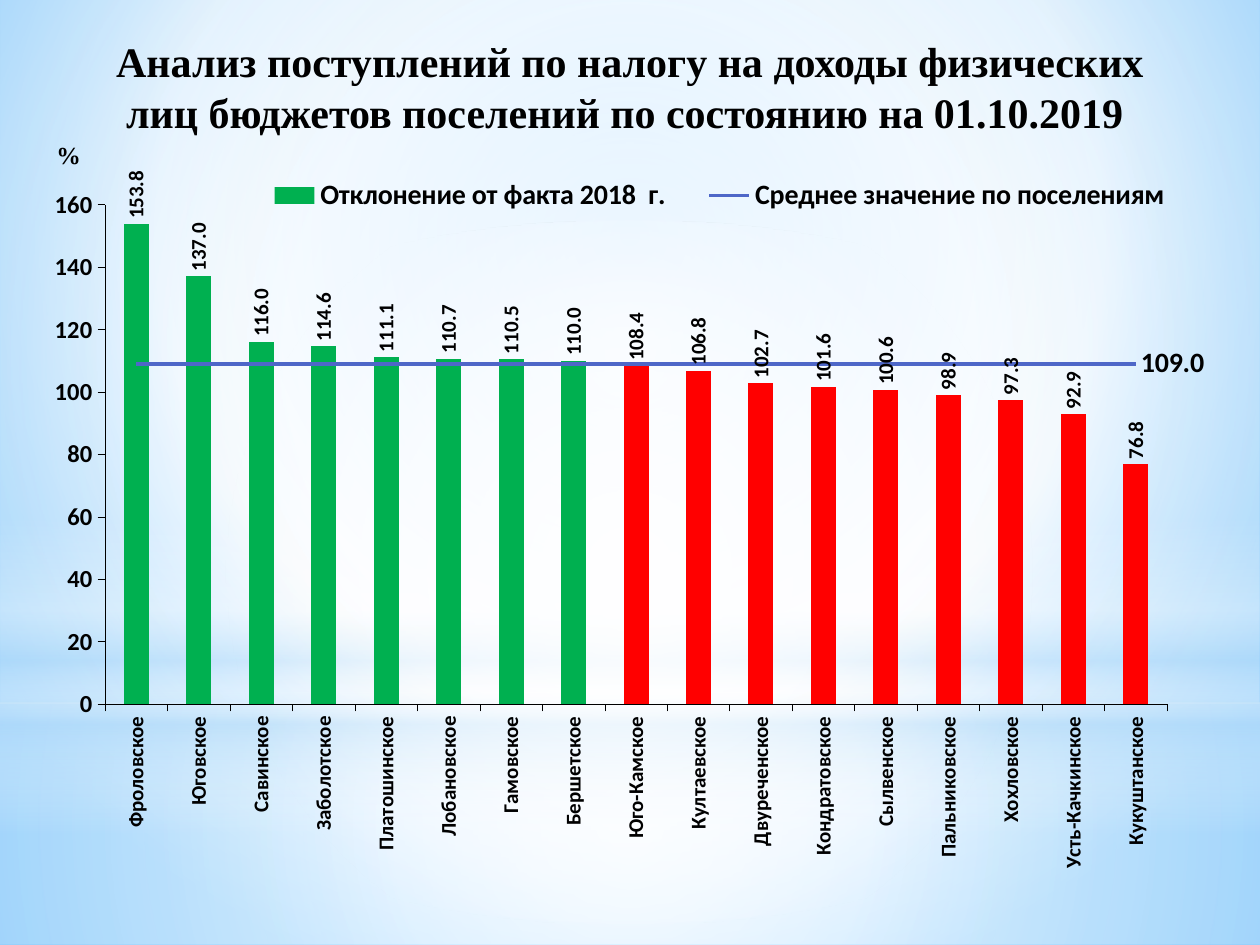
import copy
import lxml.etree
import pptx
import pptx.chart.data
import pptx.dml.color
import pptx.enum.chart
import pptx.enum.shapes
import pptx.enum.text
import pptx.oxml
import pptx.oxml.ns
import pptx.util

Pt = pptx.util.Pt
qn = pptx.oxml.ns.qn
enums = pptx.enum.chart
kinds = pptx.enum.shapes.MSO_SHAPE

TITLE = ("Анализ поступлений по налогу на доходы физических "
         "лиц бюджетов поселений по состоянию на 01.10.2019 ")
BARS = "Отклонение от факта 2018  г. "
MEAN = "Среднее значение по поселениям "
AVERAGE = 109.0
DATA = [
    ("Фроловское", 153.8), ("Юговское", 137.0), ("Савинское", 116.0),
    ("Заболотское", 114.6), ("Платошинское", 111.1), ("Лобановское", 110.7),
    ("Гамовское", 110.5), ("Бершетское", 110.0), ("Юго-Камское", 108.4),
    ("Култаевское", 106.8), ("Двуреченское", 102.7), ("Кондратовское", 101.6),
    ("Сылвенское", 100.6), ("Пальниковское", 98.9), ("Хохловское", 97.3),
    ("Усть-Качкинское", 92.9), ("Кукуштанское", 76.8),
]
GREEN, RED, BLUE, BLACK = "00B050", "FF0000", "4E67C8", "000000"
SKY, WHITE = "B4DCFA", "FFFFFF"
CENTER = (50, 50, 50, 50)

# Gradient stops: position, colour, opacity (all in percent)
BACK = [(0, "9ED5FF", 100), (60, WHITE, 100), (100, "5BB9FF", 100)]
# Kind, box in points, stops, focus of a round gradient (None: top to bottom)
GLOWS = [
    (kinds.RECTANGLE, (0, 401.76, 720, 138.24),
     [(0, WHITE, 91), (37, WHITE, 76), (100, SKY, 79)], CENTER),
    (kinds.RECTANGLE, (0, 0, 720, 401.76),
     [(0, WHITE, 89), (48, WHITE, 62), (100, SKY, 79)], CENTER),
    (kinds.RECTANGLE, (0, 296.64, 720, 180),
     [(0, WHITE, 0), (29, WHITE, 30), (45, SKY, 40), (55, WHITE, 26),
      (65, SKY, 60), (100, WHITE, 0)], None),
    (kinds.OVAL, (0, 126, 720, 401.76),
     [(0, WHITE, 100), (56, WHITE, 0)], CENTER),
]


def color(code):
    return pptx.dml.color.RGBColor.from_string(code)


def box(sizes):
    return [Pt(size) for size in sizes]


def style(font, size, face="Calibri"):
    for key, value in {"size": Pt(size), "name": face, "bold": True}.items():
        setattr(font, key, value)
    font.fill.solid()
    font.fill.fore_color.rgb = color(BLACK)


def blend(fill, root, stops, focus):
    """Replace the fill under root with a gradient."""
    fill.solid()
    old = root.find(".//" + qn("a:solidFill"))
    marks = "".join(
        f'<a:gs pos="{pos * 1000}"><a:srgbClr val="{code}">'
        f'<a:alpha val="{alpha * 1000}"/></a:srgbClr></a:gs>'
        for pos, code, alpha in stops)
    if focus:
        sides = " ".join(f'{side}="{part * 1000}"' for side, part in zip("ltrb", focus))
        way = f'<a:path path="circle"><a:fillToRect {sides}/></a:path>'
    else:
        way = '<a:lin ang="5400000" scaled="0"/>'
    new = pptx.oxml.parse_xml(
        f'<a:gradFill {pptx.oxml.ns.nsdecls("a")} rotWithShape="1">'
        f"<a:gsLst>{marks}</a:gsLst>{way}</a:gradFill>")
    old.getparent().replace(old, new)


def write(slide, text, place, size, align, inset=7.2):
    shape = slide.shapes.add_textbox(*box(place))
    frame = shape.text_frame
    looks = {"word_wrap": True, "margin_left": Pt(inset), "margin_right": Pt(inset),
             "vertical_anchor": pptx.enum.text.MSO_ANCHOR.TOP}
    for key, value in looks.items():
        setattr(frame, key, value)
    line = frame.paragraphs[0]
    line.alignment = align
    run = line.add_run()
    run.text = text
    style(run.font, size, "Times New Roman")


def settle(root, spot, sizes, inner=False):
    """Give a chart part a manual layout, in fractions of the chart."""
    for old in root.findall(qn("c:layout")):
        root.remove(old)
    rows = [("layoutTarget", "inner")] if inner else []
    rows += [("xMode", "edge"), ("yMode", "edge"), *zip("xywh", sizes)]
    layout = lxml.etree.Element(qn("c:layout"))
    manual = lxml.etree.SubElement(layout, qn("c:manualLayout"))
    for name, value in rows:
        lxml.etree.SubElement(manual, qn("c:" + name)).set("val", str(value))
    root.insert(spot, layout)


def upright(root):
    """Turn the text of labels to read upwards."""
    body = root.find(qn("c:txPr")).find(qn("a:bodyPr"))
    body.set("rot", "-5400000")
    body.set("vert", "horz")


def split(chart):
    """Move the second series to a line plot on the same axes."""
    bar = chart.plots[0]._element
    row = bar.findall(qn("c:ser"))[1]
    for flag in row.findall(qn("c:invertIfNegative")):
        row.remove(flag)
    plot = pptx.oxml.parse_xml(
        f'<c:lineChart {pptx.oxml.ns.nsdecls("c")}><c:grouping val="standard"/>'
        '<c:varyColors val="0"/><c:marker val="1"/></c:lineChart>')
    plot.insert(2, row)
    for axis in bar.findall(qn("c:axId")):
        plot.append(copy.deepcopy(axis))
    bar.addnext(plot)


def draw(slide):
    data = pptx.chart.data.CategoryChartData(number_format="#,##0.0")
    data.categories = [name for name, value in DATA]
    data.add_series(BARS, [value for name, value in DATA])
    data.add_series(MEAN, [AVERAGE] * len(DATA))
    chart = slide.shapes.add_chart(
        enums.XL_CHART_TYPE.COLUMN_CLUSTERED, *box((22.32, 94.32, 697.68, 436.32)),
        data).chart
    style(chart.font, 18)
    chart.has_title = False
    split(chart)
    plot, trend = chart.plots
    plot.gap_width = 150
    plot.vary_by_categories = False

    bars = plot.series[0]
    bars.invert_if_negative = False
    bars.format.fill.solid()
    bars.format.fill.fore_color.rgb = color(GREEN)
    for spot, (name, value) in enumerate(DATA):
        if value < AVERAGE:
            fill = bars.points[spot].format.fill
            fill.solid()
            fill.fore_color.rgb = color(RED)
    tags = bars.data_labels
    looks = {"show_value": True, "number_format": "#,##0.0",
             "number_format_is_linked": False,
             "position": enums.XL_LABEL_POSITION.OUTSIDE_END}
    for key, value in looks.items():
        setattr(tags, key, value)
    style(tags.font, 12)
    upright(tags._element)

    mean = trend.series[0]
    mean.smooth = False
    mean.marker.style = enums.XL_MARKER_STYLE.NONE
    mean.format.line.width = Pt(2.25)
    mean.format.line.color.rgb = color(BLUE)
    mean.data_labels.show_value = False
    last = mean.points[len(DATA) - 1].data_label
    style(last.font, 16)
    last.position = enums.XL_LABEL_POSITION.RIGHT

    for axis, size in (chart.category_axis, 12), (chart.value_axis, 14):
        axis.has_major_gridlines = False
        axis.major_tick_mark = enums.XL_TICK_MARK.OUTSIDE
        axis.format.line.width = Pt(0.25)
        axis.format.line.color.rgb = color(BLACK)
        style(axis.tick_labels.font, size)
    upright(chart.category_axis._element)
    scale = chart.value_axis
    for key, value in {"minimum_scale": 0, "maximum_scale": 160, "major_unit": 20}.items():
        setattr(scale, key, value)
    scale.tick_labels.number_format = "0"
    scale.tick_labels.number_format_is_linked = False

    chart.has_legend = True
    legend = chart.legend
    legend.position = enums.XL_LEGEND_POSITION.TOP
    legend.include_in_layout = False
    style(legend.font, 16)
    settle(legend._element, 1, (0.17, 0.01, 0.78, 0.06))
    settle(plot._element.getparent(), 0, (0.054, 0.052, 0.87, 0.654), True)


def main():
    deck = pptx.Presentation()
    deck.slide_width, deck.slide_height = Pt(720), Pt(540)
    slide = deck.slides.add_slide(deck.slide_layouts[6])
    blend(slide.background.fill, slide._element, BACK, (20, 10, 20, 60))
    for kind, place, stops, focus in GLOWS:
        glow = slide.shapes.add_shape(kind, *box(place))
        glow.shadow.inherit = False
        glow.line.fill.background()
        blend(glow.fill, glow._element, stops, focus)
    align = pptx.enum.text.PP_ALIGN
    write(slide, TITLE, (36, 17, 648, 63), 24, align.CENTER, 14)
    draw(slide)
    write(slide, "%", (25.2, 76.32, 33.84, 24.48), 14, align.LEFT)
    deck.save("out.pptx")


if __name__ == "__main__":
    main()
